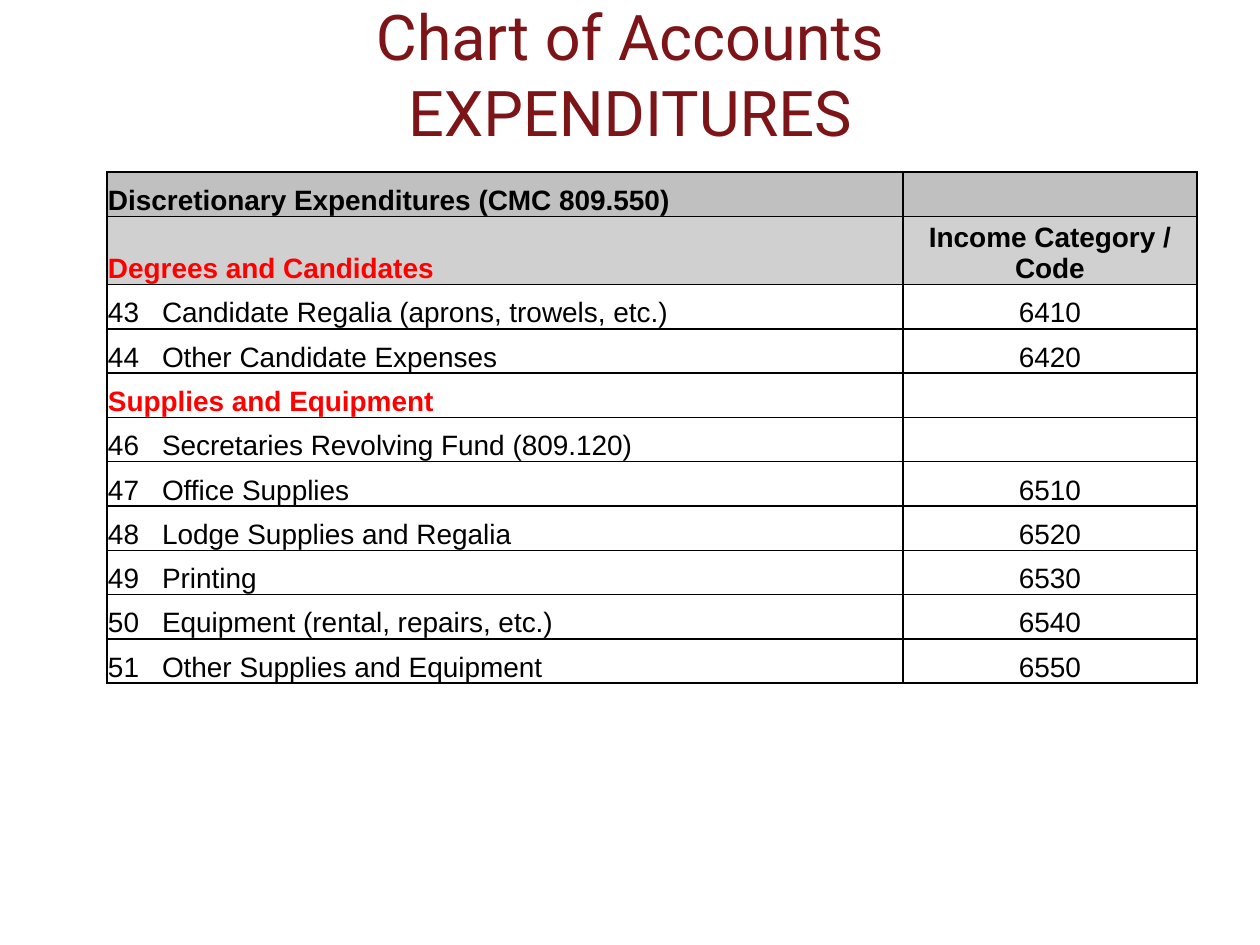
from lxml import etree
from pptx import Presentation
from pptx import util as u
from pptx.dml import color
from pptx.enum import text
from pptx.oxml import ns

PX = 914400 // 126
BLACK, RED, MAROON = "000000", "FF0000", "7D1418"
GREY, LIGHT_GREY = "C0C0C0", "D0D0D0"
HEADING_HEIGHT, CODE_WIDTH, NAME_TAB = 63, 294, 54

ROWS = [
    ("Discretionary Expenditures (CMC 809.550)", "", BLACK, True, GREY),
    ("Degrees and Candidates", "Income Category / Code", RED, True, LIGHT_GREY),
    ("43\tCandidate Regalia (aprons, trowels, etc.)", "6410", BLACK, False, None),
    ("44\tOther Candidate Expenses", "6420", BLACK, False, None),
    ("Supplies and Equipment", "", RED, True, None),
    ("46\tSecretaries Revolving Fund (809.120)", "", BLACK, False, None),
    ("47\tOffice Supplies", "6510", BLACK, False, None),
    ("48\tLodge Supplies and Regalia", "6520", BLACK, False, None),
    ("49\tPrinting", "6530", BLACK, False, None),
    ("50\tEquipment (rental, repairs, etc.)", "6540", BLACK, False, None),
    ("51\tOther Supplies and Equipment", "6550", BLACK, False, None),
]


def px(length):
    """Turn pixels into EMU."""
    return u.Emu(int(length * PX))


def rgb(value):
    """Turn a hex string into a colour."""
    return color.RGBColor.from_string(value)


def add_run(paragraph, words, size, font, colour, bold=False):
    """Add one formatted run to a paragraph."""
    run = paragraph.add_run()
    run.text = words
    run.font.size = u.Pt(size)
    run.font.name = font
    run.font.bold = bold
    run.font.color.rgb = rgb(colour)


def add_tab_stop(paragraph, position):
    """Give a paragraph one left tab stop."""
    properties = paragraph._p.get_or_add_pPr()
    tabs = etree.SubElement(properties, ns.qn("a:tabLst"))
    etree.SubElement(tabs, ns.qn("a:tab"), pos=str(px(position)), algn="l")


def add_borders(cell, colour):
    """Draw a one point line on every side of a cell."""
    properties = cell._tc.get_or_add_tcPr()
    for side in ("a:lnL", "a:lnR", "a:lnT", "a:lnB"):
        line = etree.SubElement(properties, ns.qn(side), w=str(u.Pt(1)))
        fill = etree.SubElement(line, ns.qn("a:solidFill"))
        etree.SubElement(fill, ns.qn("a:srgbClr"), val=colour)


def add_title(slide, left, top, width, height):
    """Place the two centred title lines."""
    shape = slide.shapes.add_textbox(px(left), px(top), px(width), px(height))
    frame = shape.text_frame
    frame.word_wrap = True
    frame.margin_top = frame.margin_bottom = 0
    frame.vertical_anchor = text.MSO_ANCHOR.MIDDLE
    paragraph = frame.paragraphs[0]
    paragraph.alignment = text.PP_ALIGN.CENTER
    add_run(paragraph, "Chart of Accounts", 36, "Roboto", MAROON)
    paragraph.add_line_break()
    add_run(paragraph, "EXPENDITURES", 36, "Roboto", MAROON)


def fill_cell(cell, words, colour, bold, fill, alignment):
    """Write and style one table cell."""
    cell.margin_left = cell.margin_right = cell.margin_top = px(1)
    cell.margin_bottom = 0
    cell.vertical_anchor = text.MSO_ANCHOR.BOTTOM
    add_borders(cell, BLACK)
    if fill:
        cell.fill.solid()
        cell.fill.fore_color.rgb = rgb(fill)
    else:
        cell.fill.background()
    paragraph = cell.text_frame.paragraphs[0]
    paragraph.alignment = alignment
    if "\t" in words:
        add_tab_stop(paragraph, NAME_TAB)
    if words:
        add_run(paragraph, words, 16, "Arial", colour, bold)


def add_accounts(slide, left, top, width, height):
    """Place the table of accounts and their codes."""
    frame = slide.shapes.add_table(len(ROWS), 2, px(left), px(top), px(width), px(height))
    table = frame.table
    table.first_row = table.horz_banding = False
    table.columns[0].width = px(width - CODE_WIDTH)
    table.columns[1].width = px(CODE_WIDTH)
    row_height = (height - HEADING_HEIGHT) / (len(ROWS) - 1)
    for index, (account, code, colour, bold, fill) in enumerate(ROWS):
        table.rows[index].height = px(HEADING_HEIGHT if index == 1 else row_height)
        fill_cell(table.cell(index, 0), account, colour, bold, fill, text.PP_ALIGN.LEFT)
        fill_cell(table.cell(index, 1), code, BLACK, bold, fill, text.PP_ALIGN.CENTER)


def main():
    """Build and save the presentation."""
    presentation = Presentation()
    presentation.slide_width = u.Inches(10)
    presentation.slide_height = u.Inches(7.5)
    slide = presentation.slides.add_slide(presentation.slide_layouts[6])
    add_title(slide, 63, 0, 1134, 146)
    add_accounts(slide, 107, 172, 1090, 506)
    presentation.save("out.pptx")


if __name__ == "__main__":
    main()
